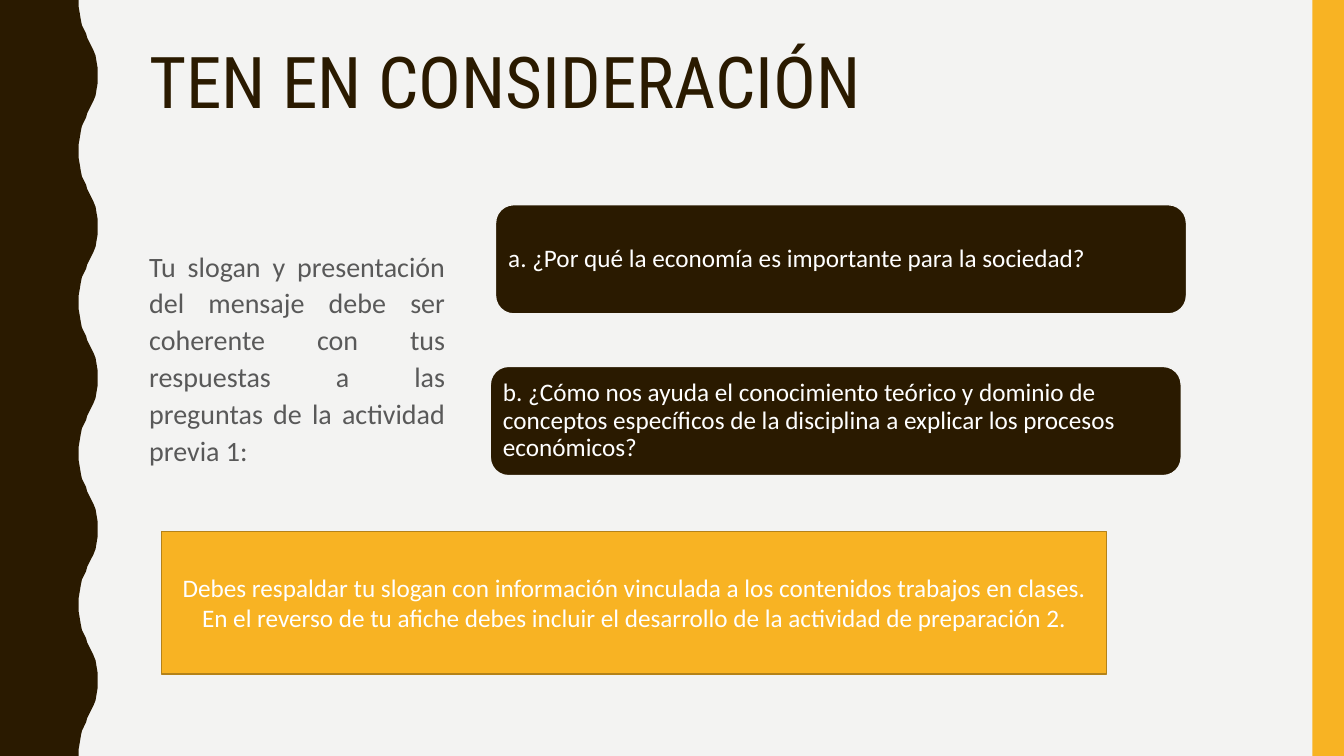
from lxml.etree import SubElement
from pptx import Presentation
from pptx.dml.color import RGBColor
from pptx.enum.shapes import MSO_SHAPE
from pptx.enum.text import MSO_ANCHOR, MSO_AUTO_SIZE, PP_ALIGN
from pptx.oxml.ns import qn
from pptx.util import Pt

PX = 9525  # EMU per px, 96 px to the inch
BROWN, GOLD, PAPER, WHITE = "2A1A00", "F8B323", "F3F3F2", "FFFFFF"


def paint(color_format, color):
    color_format.rgb = RGBColor.from_string(color)


def write(shape, text, size, color, align, anchor, spacing=1.0, font="Calibri", margins=(10, 5)):
    frame = shape.text_frame
    frame.text = text
    frame.word_wrap = True
    frame.auto_size = MSO_AUTO_SIZE.NONE
    frame.vertical_anchor = anchor
    frame.margin_left = frame.margin_right = margins[0] * PX
    frame.margin_top = frame.margin_bottom = margins[1] * PX
    for paragraph in frame.paragraphs:
        paragraph.alignment = align
        paragraph.line_spacing = spacing
        paragraph.space_before = Pt(0)
        for run in paragraph.runs:
            run.font.name = font
            run.font.size = Pt(size)
            paint(run.font.color, color)


presentation = Presentation()
presentation.slide_width = 1280 * PX
presentation.slide_height = 720 * PX
slide = presentation.slides.add_slide(presentation.slide_layouts[1])
slide.background.fill.solid()
paint(slide.background.fill.fore_color, PAPER)

# Wavy left edge: half a wave, mirrored and repeated
half_wave = [(75, 0), (75, 7), (76, 13), (77, 19), (78, 24), (80, 28), (82, 32), (83, 36),
             (85, 40), (87, 44), (89, 48), (91, 53), (92, 59), (93, 65), (93, 72)]
wave = half_wave + [(x, 144 - y) for x, y in half_wave[-2::-1]]
edge = [(x, y + 144 * number) for number in range(5) for x, y in wave]
builder = slide.shapes.build_freeform(0, 0, scale=PX)
builder.add_line_segments(edge + [(0, 720)], close=True)
wavy_edge = builder.convert_to_shape()

# Gold right edge
gold_edge = slide.shapes.add_shape(MSO_SHAPE.RECTANGLE, 1250 * PX, 0, 30 * PX, 720 * PX)
for shape, color in ((wavy_edge, BROWN), (gold_edge, GOLD)):
    shape.shadow.inherit = False
    shape.fill.solid()
    paint(shape.fill.fore_color, color)
    shape.line.fill.background()

# Title and introduction
title = slide.shapes.title
introduction = slide.placeholders[1]
for placeholder, box in ((title, (132, 40, 1068, 156)), (introduction, (132, 229, 302, 192))):
    placeholder.left, placeholder.top, placeholder.width, placeholder.height = (
        value * PX for value in box)
write(title, "TEN EN CONSIDERACIÓN", 51, BROWN, PP_ALIGN.LEFT, MSO_ANCHOR.TOP, 0.9,
      "Roboto Condensed")
write(introduction,
      "Tu slogan y presentación del mensaje debe ser coherente con tus respuestas "
      "a las preguntas de la actividad previa 1:",
      20, "595959", PP_ALIGN.JUSTIFY, MSO_ANCHOR.TOP, 1.1)
properties = introduction.text_frame.paragraphs[0]._p.get_or_add_pPr()
properties.set("marL", "0")
properties.set("indent", "0")
SubElement(properties, qn("a:buNone"))

# Question cards and closing note
cards = [
    (MSO_SHAPE.ROUNDED_RECTANGLE, (472, 195, 658, 104), BROWN, PAPER, PP_ALIGN.LEFT, 0.9, (7, 7),
     "a. ¿Por qué la economía es importante para la sociedad?"),
    (MSO_SHAPE.ROUNDED_RECTANGLE, (467, 349, 658, 104), BROWN, PAPER, PP_ALIGN.LEFT, 0.9, (7, 7),
     "b. ¿Cómo nos ayuda el conocimiento teórico y dominio de conceptos específicos "
     "de la disciplina a explicar los procesos económicos?"),
    (MSO_SHAPE.RECTANGLE, (154, 506, 900, 136), GOLD, "B48219", PP_ALIGN.CENTER, 1.0, (10, 5),
     "Debes respaldar tu slogan con información vinculada a los contenidos trabajos en clases.\n"
     "En el reverso de tu afiche debes incluir el desarrollo de la actividad de preparación 2."),
]
for kind, box, fill, line, align, spacing, margins, text in cards:
    card = slide.shapes.add_shape(kind, *(value * PX for value in box))
    card.shadow.inherit = False
    card.fill.solid()
    paint(card.fill.fore_color, fill)
    paint(card.line.color, line)
    card.line.width = Pt(1)
    write(card, text, 18, WHITE, align, MSO_ANCHOR.MIDDLE, spacing, margins=margins)

presentation.save("out.pptx")
